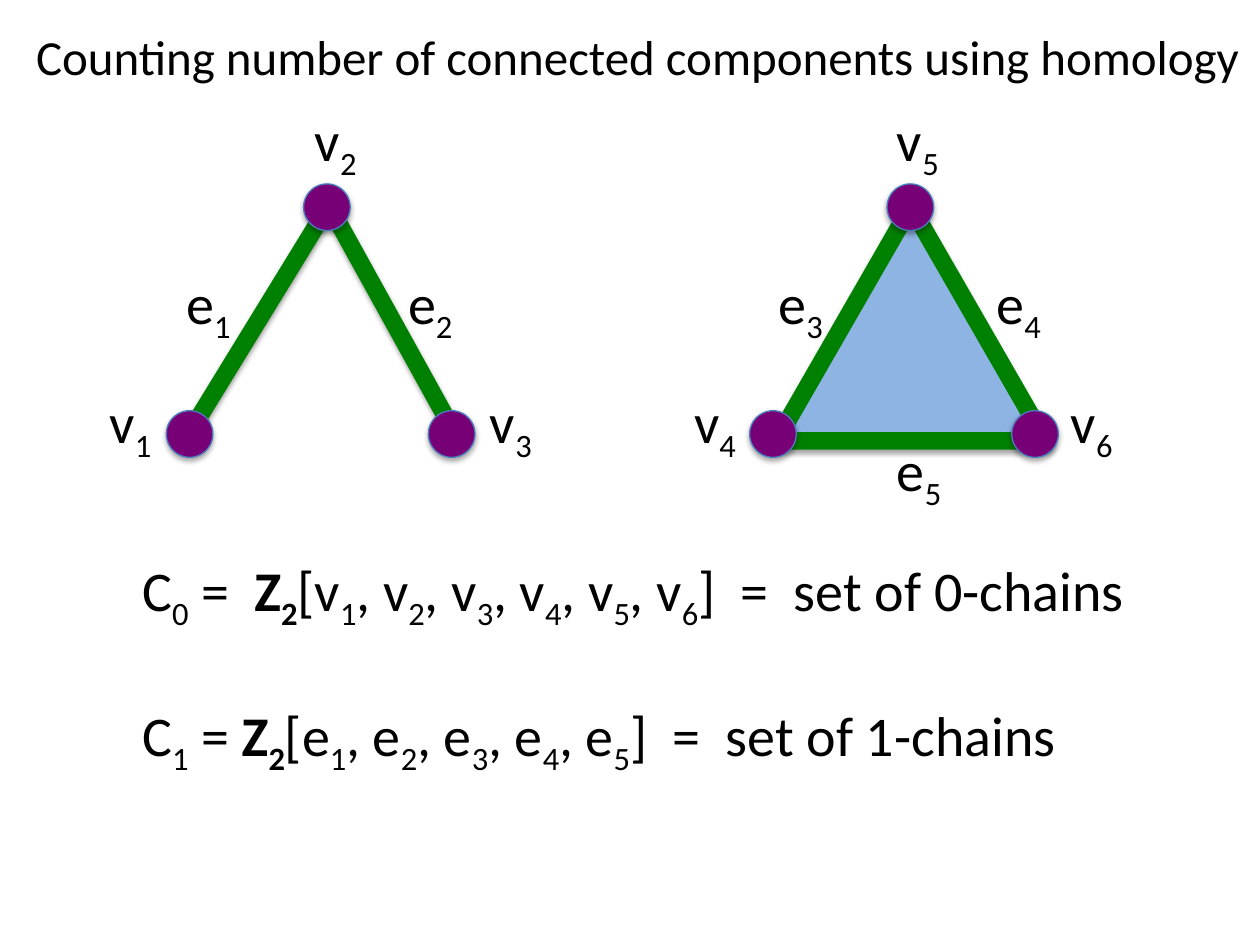
from lxml.etree import SubElement
from pptx import Presentation
from pptx.dml.color import RGBColor
from pptx.enum.shapes import MSO_CONNECTOR, MSO_SHAPE
from pptx.enum.text import MSO_AUTO_SIZE, PP_ALIGN
from pptx.oxml.ns import qn
from pptx.util import Inches, Pt

HUES = {"node": "770077", "rim": "4B7EBC", "edge": "008000",
        "face": "8EB4E3", "ink": "000000"}
HUES = {name: RGBColor.from_string(code) for name, code in HUES.items()}

deck = Presentation()
deck.slide_width, deck.slide_height = Inches(10), Inches(7.5)
slide = deck.slides.add_slide(deck.slide_layouts[6])
COL = deck.slide_width / 100
ROW = deck.slide_height / 75


def style(shape, hue, width, alpha, dist):
    """Set the outline and a soft shadow that falls straight down."""
    shape.line.color.rgb = HUES[hue]
    shape.line.width = Pt(width)
    fx = SubElement(shape._element.spPr, qn("a:effectLst"))
    drop = SubElement(fx, qn("a:outerShdw"), blurRad=str(Pt(3.1)),
                      dist=str(Pt(dist)), dir="5400000", rotWithShape="0")
    tint = SubElement(drop, qn("a:srgbClr"), val=str(HUES["ink"]))
    SubElement(tint, qn("a:alpha"), val=str(alpha * 1000))


def write(home, box, lines, size=32, align=PP_ALIGN.LEFT, gap=0):
    """Add a text box; _ lowers the next character, *...* is bold."""
    x, y, w, h = box
    frame = home.shapes.add_textbox(
        int(x * COL), int(y * ROW), int(w * COL), int(h * ROW)).text_frame
    frame.word_wrap = True
    frame.auto_size = MSO_AUTO_SIZE.SHAPE_TO_FIT_TEXT
    for row, line in enumerate(lines):
        para = frame.add_paragraph() if row else frame.paragraphs[0]
        para.alignment = align
        para.space_before = Pt(gap if row else 0)
        for turn, part in enumerate(line.split("*")):
            for pos, bit in enumerate(part.split("_")):
                cut = 1 if pos else 0
                for text, low in ((bit[:cut], True), (bit[cut:], False)):
                    if not text:
                        continue
                    run = para.add_run()
                    run.text = text
                    form = {"name": "Calibri", "size": Pt(size),
                            "bold": turn % 2 == 1}
                    for key, value in form.items():
                        setattr(run.font, key, value)
                    run.font.color.rgb = HUES["ink"]
                    if low:
                        run._r.get_or_add_rPr().set("baseline", "-25000")


NODE = 3.7
SPOTS = [(13.2, 32.6), (34, 32.6), (24.1, 14.6)]
SHIFT = 46.3
LABELS = [
    {"v_1": (7.7, 30.3), "v_2": (24, 7.9), "v_3": (37.9, 30.3),
     "e_1": (13.8, 20.8), "e_2": (31.4, 20.8)},
    {"v_6": (84, 30.3), "v_4": (54.1, 30.3), "v_5": (70.2, 7.9),
     "e_3": (60.8, 20.8), "e_5": (70.2, 34.1), "e_4": (78.1, 20.8)},
]

filled = slide.shapes.add_group_shape()
face = filled.shapes.add_shape(
    MSO_SHAPE.ISOSCELES_TRIANGLE, int(61.6 * COL), int(16.4 * ROW),
    int(21.4 * COL), int(18.6 * ROW))
face.fill.solid()
face.fill.fore_color.rgb = HUES["face"]
style(face, "edge", 10, 35, 1.8)

path = slide.shapes.add_group_shape()
for x, y in ((36.1, 34.4), (15, 34.4)):
    edge = path.shapes.add_connector(
        MSO_CONNECTOR.STRAIGHT, int(x * COL), int(y * ROW),
        int(26.1 * COL), int(16.3 * ROW))
    style(edge, "edge", 10, 38, 1.6)

for group, shift, names in zip((path, filled), (0, SHIFT), LABELS):
    for x, y in SPOTS:
        node = group.shapes.add_shape(
            MSO_SHAPE.OVAL, int((x + shift) * COL), int(y * ROW),
            int(NODE * COL), int(NODE * ROW))
        node.fill.solid()
        node.fill.fore_color.rgb = HUES["node"]
        style(node, "rim", 0.75, 35, 1.8)
    for name, (x, y) in names.items():
        write(group, (x, y, 7.1, 6.4), [name])

write(slide, (10.3, 43.6, 84.9, 17.2),
      ["C_0 =  *Z_2*[v_1, v_2, v_3, v_4, v_5, v_6]  =  set of 0-chains",
       "C_1 = *Z_2*[e_1, e_2, e_3, e_4, e_5]  =  set of 1-chains"], gap=39)
write(slide, (1.2, 1.6, 98.8, 5.7),
      ["Counting number of connected components using homology"],
      size=28, align=PP_ALIGN.CENTER)

deck.save("out.pptx")
